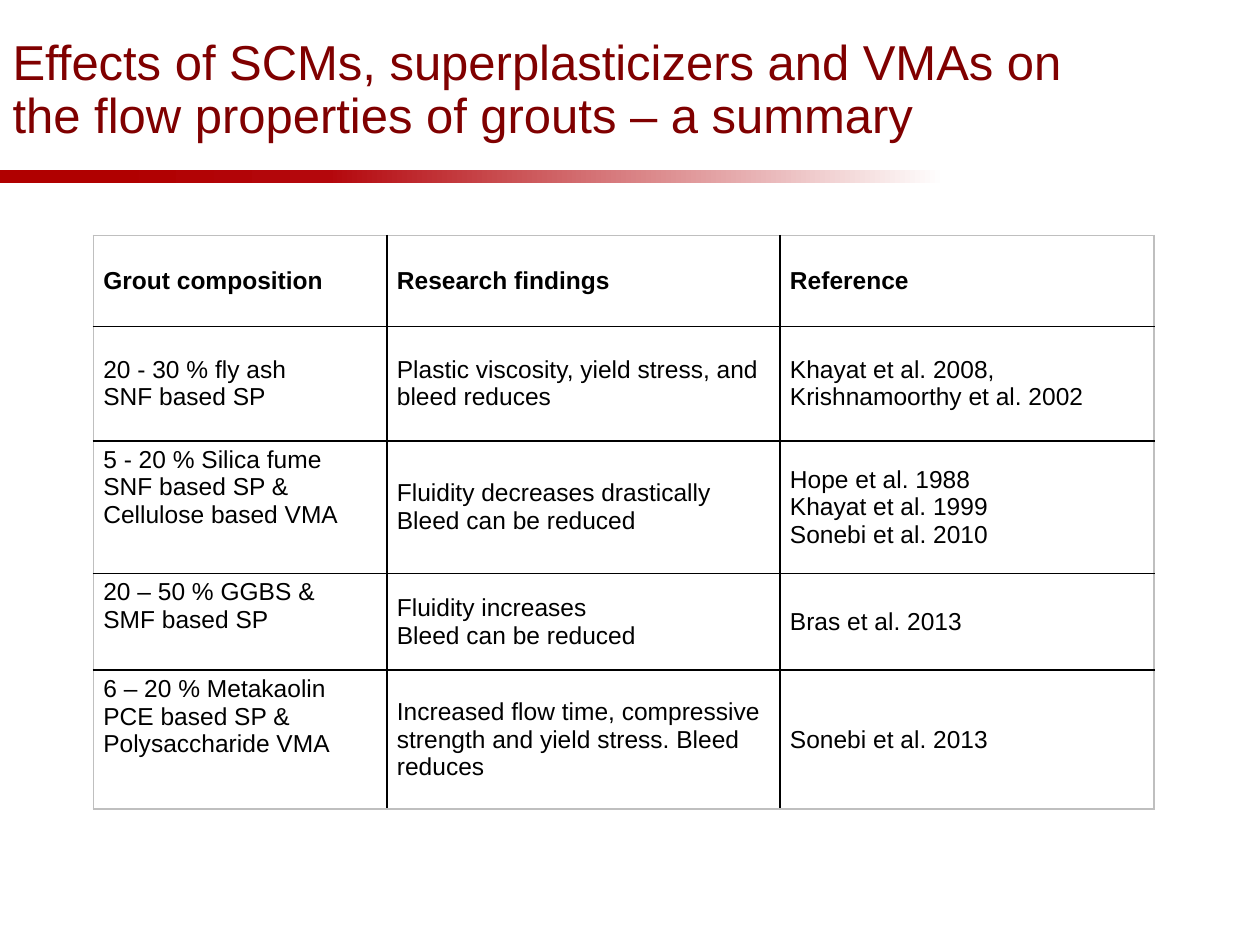
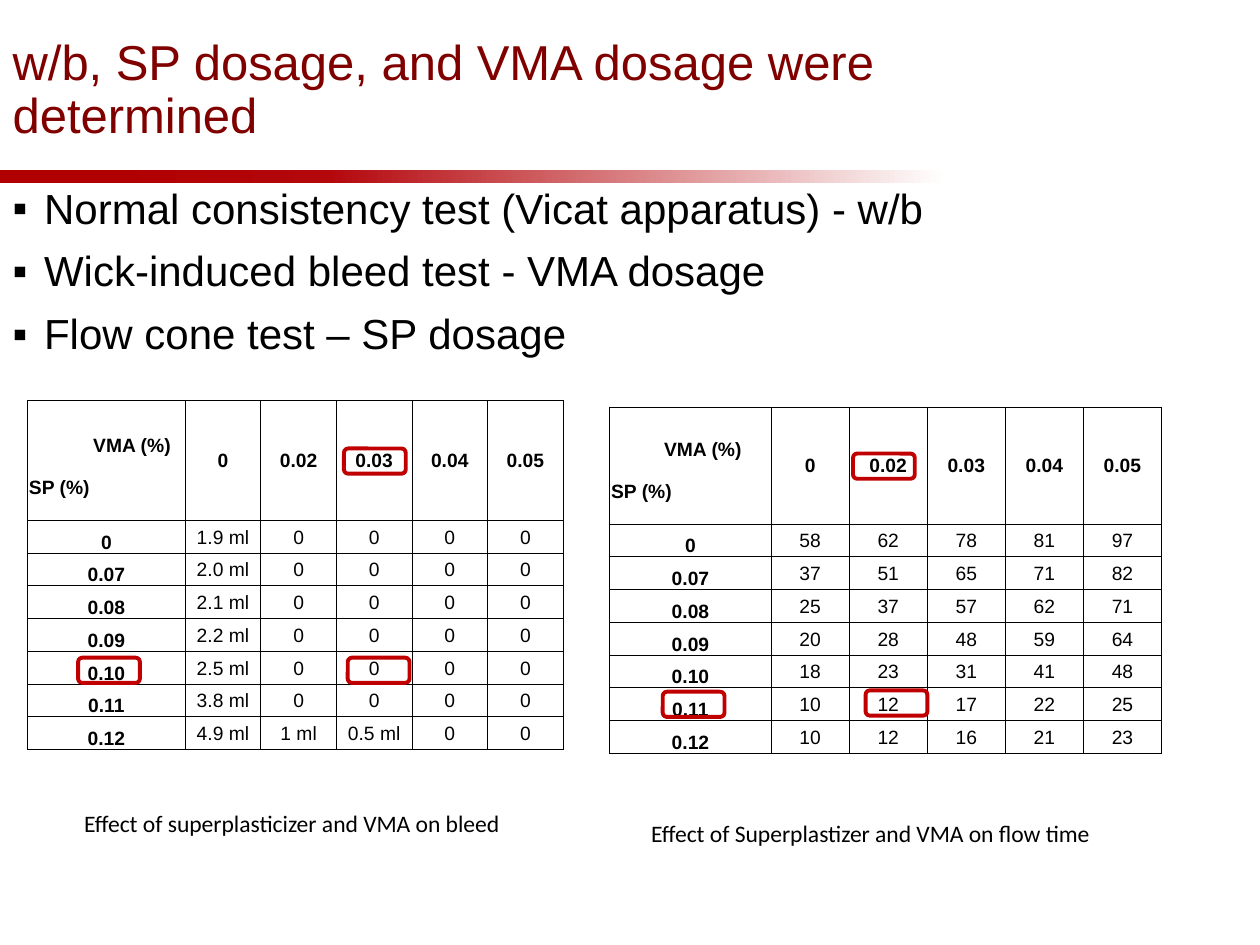
from lxml import etree
from pptx import Presentation
from pptx.dml.color import RGBColor
from pptx.enum import shapes, text
from pptx.oxml.ns import qn
from pptx.util import Inches, Pt

COLORS = {
    "title": "800000",
    "ink": "000000",
    "edge": "BFBFBF",
    "mark": "C00000",
    "band": "B00000",
    "band_mid": "B4070C",
    "paper": "FFFFFF",
}
BAND_STOPS = [(0, "band"), (8, "band"), (26, "band_mid"), (75, "paper"), (100, "paper")]
MIDDLE, BOTTOM, TOP = text.MSO_ANCHOR.MIDDLE, text.MSO_ANCHOR.BOTTOM, text.MSO_ANCHOR.TOP

FINDINGS = [
    ("Grout composition", "Research findings", "Reference"),
    ("20 - 30 % fly ash\nSNF based SP",
     "Plastic viscosity, yield stress, and bleed reduces",
     "Khayat et al. 2008,\nKrishnamoorthy et al. 2002"),
    ("5 - 20 % Silica fume\nSNF based SP &\nCellulose based VMA",
     "Fluidity decreases drastically\nBleed can be reduced",
     "Hope et al. 1988\nKhayat et al. 1999\nSonebi et al. 2010"),
    ("20 – 50 % GGBS &\nSMF based SP",
     "Fluidity increases\nBleed can be reduced",
     "Bras et al. 2013"),
    ("6 – 20 % Metakaolin\nPCE based SP & Polysaccharide VMA",
     "Increased flow time, compressive strength and yield stress. Bleed reduces",
     "Sonebi et al. 2013"),
]
TESTS = [
    "Normal consistency test (Vicat apparatus) - w/b",
    "Wick-induced bleed test - VMA dosage",
    "Flow cone test – SP dosage",
]
VMA_DOSAGES = ["0", "0.02", "0.03", "0.04", "0.05"]
SP_DOSAGES = ["0", "0.07", "0.08", "0.09", "0.10", "0.11", "0.12"]
BLEED = [[f"{volume} ml", "0", "0", "0", "0"] for volume in (1.9, 2.0, 2.1, 2.2, 2.5, 3.8)]
BLEED.append(["4.9 ml", "1 ml", "0.5 ml", "0", "0"])
FLOW_TIME = [
    [58, 62, 78, 81, 97],
    [37, 51, 65, 71, 82],
    [25, 37, 57, 62, 71],
    [20, 28, 48, 59, 64],
    [18, 23, 31, 41, 48],
    [10, 12, 17, 22, 25],
    [10, 12, 16, 21, 23],
]


def rgb(name):
    """Return a named colour."""
    return RGBColor.from_string(COLORS[name])


def style_runs(paragraph, size, color="ink", font="Arial", bold=False):
    """Format every run of a paragraph."""
    for run in paragraph.runs:
        run.font.name = font
        run.font.size = Pt(size)
        run.font.bold = bold
        run.font.color.rgb = rgb(color)


def place(shape, left, top, width, height):
    """Move and size a shape in inches."""
    shape.left, shape.top = Inches(left), Inches(top)
    shape.width, shape.height = Inches(width), Inches(height)


def add_band(slide, left, top, width, height):
    """Draw the red band that fades to the right."""
    band = slide.shapes.add_shape(
        shapes.MSO_SHAPE.RECTANGLE, Inches(left), Inches(top), Inches(width), Inches(height))
    band.shadow.inherit = False
    band.line.fill.background()
    band.fill.gradient()
    band.fill.gradient_angle = 0
    stops = band._element.spPr.find(qn("a:gradFill")).find(qn("a:gsLst"))
    for stop in list(stops):
        stops.remove(stop)
    for position, color in BAND_STOPS:
        stop = etree.SubElement(stops, qn("a:gs"), pos=str(position * 1000))
        etree.SubElement(stop, qn("a:srgbClr"), val=COLORS[color])


def add_titled_slide(presentation, layout, heading):
    """Add a slide with the shared title style and band."""
    slide = presentation.slides.add_slide(presentation.slide_layouts[layout])
    title = slide.shapes.title
    place(title, 0, 0, 8.62, 1.44)
    frame = title.text_frame
    frame.text = heading
    frame.auto_size = text.MSO_AUTO_SIZE.NONE
    frame.vertical_anchor = MIDDLE
    paragraph = frame.paragraphs[0]
    paragraph.alignment = text.PP_ALIGN.LEFT
    paragraph.line_spacing = 0.9
    style_runs(paragraph, 28, "title")
    add_band(slide, 0, 1.35, 10, 0.1)
    return slide


def set_borders(cell, width, sides):
    """Draw the four cell borders from a side-to-colour mapping."""
    properties = cell._tc.get_or_add_tcPr()
    for side in "LRTB":
        line = etree.SubElement(properties, qn(f"a:ln{side}"), w=str(Pt(width)))
        fill = etree.SubElement(line, qn("a:solidFill"))
        etree.SubElement(fill, qn("a:srgbClr"), val=COLORS[sides[side]])


def add_grid(slide, left, top, columns, rows, border, edge="ink"):
    """Add an unfilled, bordered table."""
    frame = slide.shapes.add_table(
        len(rows), len(columns), Inches(left), Inches(top),
        Inches(sum(columns)), Inches(sum(rows)))
    table = frame.table
    table.first_row = table.horz_banding = False
    for column, width in zip(table.columns, columns):
        column.width = Inches(width)
    for row, height in zip(table.rows, rows):
        row.height = Inches(height)
    last_row, last_column = len(rows) - 1, len(columns) - 1
    for r in range(len(rows)):
        for c in range(len(columns)):
            outer = {"L": c == 0, "R": c == last_column, "T": r == 0, "B": r == last_row}
            cell = table.cell(r, c)
            set_borders(cell, border, {side: edge if on else "ink" for side, on in outer.items()})
            cell.fill.background()
    return table


def fill_cell(cell, content, size, bold, anchor, margins, alignment=text.PP_ALIGN.LEFT):
    """Write and format the text of a cell."""
    cell.text_frame.text = str(content)
    cell.vertical_anchor = anchor
    cell.margin_left = cell.margin_right = Inches(margins[0])
    cell.margin_top, cell.margin_bottom = Inches(margins[1]), Inches(margins[2])
    for paragraph in cell.text_frame.paragraphs:
        paragraph.alignment = alignment
        style_runs(paragraph, size, bold=bold)


def add_findings(slide, left, top):
    """Add the table of findings by grout composition."""
    table = add_grid(slide, left, top, [2.33, 3.12, 2.97],
                     [0.72, 0.91, 1.05, 0.77, 1.1], 1, "edge")
    for r, row in enumerate(FINDINGS):
        for c, content in enumerate(row):
            anchor = TOP if c == 0 and r > 1 else MIDDLE
            fill_cell(table.cell(r, c), content, 14, r == 0, anchor, (0.08, 0.04, 0.04))


def add_tests(slide, left, top, width, height):
    """Fill the body placeholder with the bulleted tests."""
    body = slide.placeholders[1]
    place(body, left, top, width, height)
    frame = body.text_frame
    frame.text = "\n".join(TESTS)
    frame.auto_size = text.MSO_AUTO_SIZE.NONE
    for index, paragraph in enumerate(frame.paragraphs):
        properties = paragraph._p.get_or_add_pPr()
        properties.set("marL", str(Inches(0.25)))
        properties.set("indent", str(-Inches(0.25)))
        etree.SubElement(properties, qn("a:buFont"), typeface="Arial")
        etree.SubElement(properties, qn("a:buChar"), char="▪")
        paragraph.line_spacing = 0.9
        paragraph.space_before = Pt(10 if index else 0)
        style_runs(paragraph, 24)


def add_mark(slide, left, top):
    """Outline a chosen value."""
    mark = slide.shapes.add_shape(
        shapes.MSO_SHAPE.ROUNDED_RECTANGLE, Inches(left), Inches(top), Inches(0.49), Inches(0.2))
    mark.shadow.inherit = False
    mark.fill.background()
    mark.line.color.rgb = rgb("mark")
    mark.line.width = Pt(2.25)


def add_caption(slide, left, top, width, caption):
    """Add the caption under a dosage table."""
    box = slide.shapes.add_textbox(Inches(left), Inches(top), Inches(width), Inches(0.33))
    box.text_frame.word_wrap = True
    box.text_frame.text = caption
    style_runs(box.text_frame.paragraphs[0], 13.5, font="Calibri")


def add_dosage_panel(slide, left, top, label_width, value_width, header_height,
                     vma_indent, values, marks, caption, caption_at):
    """Add a dosage table with its marks and caption."""
    table = add_grid(slide, left, top, [label_width] + [value_width] * len(VMA_DOSAGES),
                     [header_height] + [0.26] * len(SP_DOSAGES), 0.5)
    margins = (0.01, 0.01, 0)
    corner = table.cell(0, 0)
    fill_cell(corner, "VMA (%)\nSP (%)", 11, True, BOTTOM, (0.01, 0.01, 0.17))
    vma, sp = corner.text_frame.paragraphs
    vma._p.get_or_add_pPr().set("marL", str(Inches(vma_indent)))
    sp.space_before = Pt(12)
    for c, dosage in enumerate(VMA_DOSAGES, 1):
        fill_cell(table.cell(0, c), dosage, 11, True, MIDDLE, margins, text.PP_ALIGN.CENTER)
    for r, (dosage, row) in enumerate(zip(SP_DOSAGES, values), 1):
        for c, value in enumerate([dosage, *row]):
            fill_cell(table.cell(r, c), value, 11, c == 0, MIDDLE if c else BOTTOM,
                      margins, text.PP_ALIGN.CENTER)
    add_caption(slide, left + caption_at[0], top + caption_at[1], 3.85, caption)
    for x, y in marks:
        add_mark(slide, left + x, top + y)


def build_summary(presentation):
    """Build the summary of research findings."""
    slide = add_titled_slide(
        presentation, 5,
        "Effects of SCMs, superplasticizers and VMAs on the flow properties of grouts – a summary")
    add_findings(slide, 0.74, 1.87)


def build_dosages(presentation):
    """Build the slide on chosen dosages."""
    slide = add_titled_slide(presentation, 1, "w/b, SP dosage, and VMA dosage were determined")
    add_tests(slide, 0, 1.44, 9.99, 6.06)
    add_dosage_panel(slide, 0.22, 3.18, 1.25, 0.6, 0.95, 0.51, BLEED,
                     [(2.51, 0.38), (0.4, 2.04), (2.54, 2.04)],
                     "Effect of superplasticizer and VMA on bleed", (0.35, 3.19))
    add_dosage_panel(slide, 4.84, 3.23, 1.28, 0.62, 0.93, 0.42, FLOW_TIME,
                     [(1.93, 0.37), (0.42, 2.26), (2.03, 2.25)],
                     "Effect of Superplastizer and VMA on flow time", (0.23, 3.22))


def main():
    """Build and save the presentation."""
    presentation = Presentation()
    presentation.slide_width, presentation.slide_height = Inches(10), Inches(7.5)
    build_summary(presentation)
    build_dosages(presentation)
    presentation.save("out.pptx")


if __name__ == "__main__":
    main()
